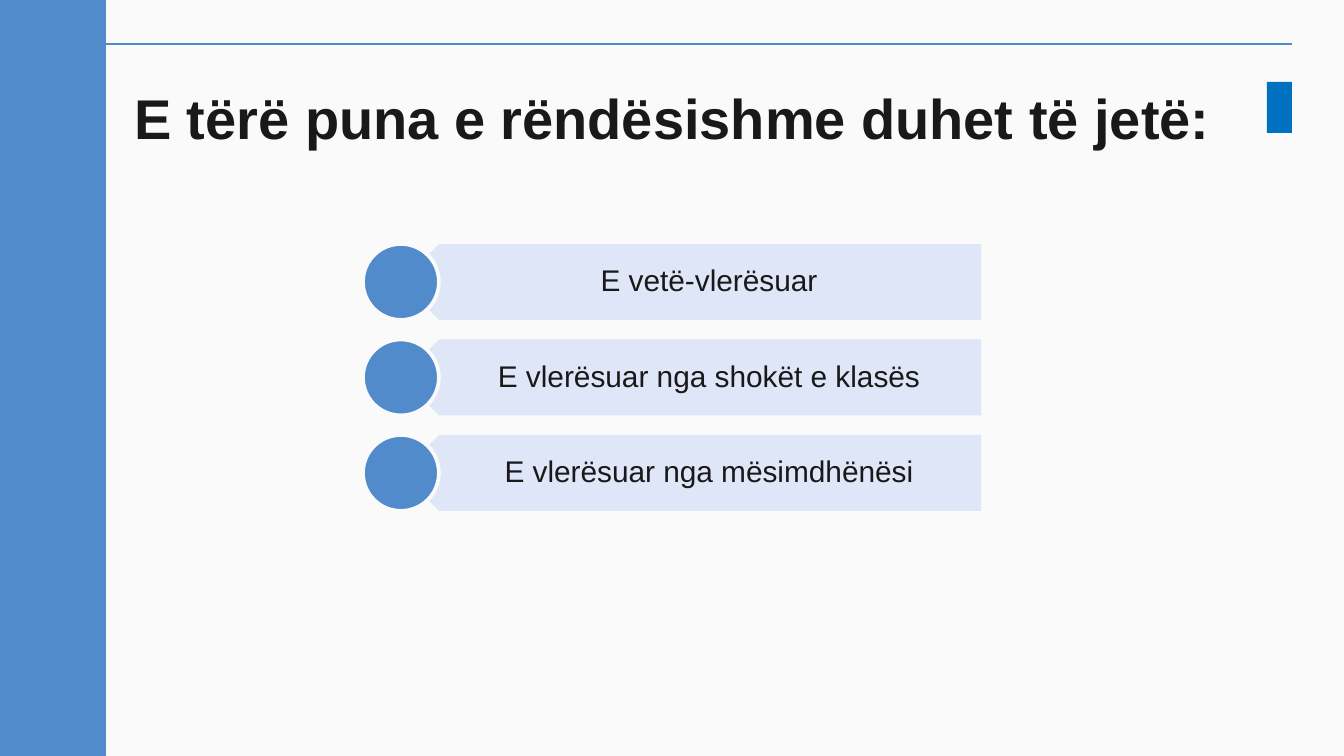
from pptx import Presentation
from pptx.dml.color import RGBColor
from pptx.enum.shapes import MSO_CONNECTOR, MSO_SHAPE
from pptx.enum.text import MSO_ANCHOR, MSO_AUTO_SIZE, PP_ALIGN
from pptx.oxml.ns import qn
from pptx.util import Pt
from lxml import etree

RECTANGLE = MSO_SHAPE.RECTANGLE
PENTAGON = MSO_SHAPE.PENTAGON
OVAL = MSO_SHAPE.OVAL
STRAIGHT = MSO_CONNECTOR.STRAIGHT
CENTER = PP_ALIGN.CENTER
TOP = MSO_ANCHOR.TOP
MIDDLE = MSO_ANCHOR.MIDDLE
NO_AUTOFIT = MSO_AUTO_SIZE.NONE

EMU_PER_PX = 9144000 / 1344
WIDTH, HEIGHT = 1344, 756
FONT = "Arial"
COLORS = {
    "background": "FAFAFA",
    "blue": "518BCB",
    "accent": "0070C0",
    "banner": "DEE6F7",
    "text": "191919",
}
TITLE = "E tërë puna e rëndësishme duhet të jetë:"
ASSESSMENTS = [
    "E vetë-vlerësuar",
    "E vlerësuar nga shokët e klasës",
    "E vlerësuar nga mësimdhënësi",
]


def px(length):
    return round(length * EMU_PER_PX)


def color(name):
    return RGBColor.from_string(COLORS[name])


def add_filled(slide, kind, box, fill):
    shape = slide.shapes.add_shape(kind, *map(px, box))
    shape.shadow.inherit = False
    shape.fill.solid()
    shape.fill.fore_color.rgb = color(fill)
    shape.line.fill.background()
    return shape


def format_text(frame, text, size, insets, anchor, bold=False):
    frame.word_wrap = True
    frame.auto_size = NO_AUTOFIT
    frame.vertical_anchor = anchor
    frame.margin_left, frame.margin_top, frame.margin_right, frame.margin_bottom = map(px, insets)
    paragraph = frame.paragraphs[0]
    paragraph.text = text
    paragraph.alignment = CENTER
    paragraph.font.name = FONT
    paragraph.font.size = Pt(size)
    paragraph.font.bold = bold
    paragraph.font.color.rgb = color("text")
    return paragraph


def add_frame(slide, left, top, width, height):
    rule_y = px(top + 44)
    rule = slide.shapes.add_connector(STRAIGHT, px(left + 7), rule_y, px(left + width - 52), rule_y)
    rule.line.color.rgb = color("blue")
    rule.line.width = Pt(0.75)
    etree.SubElement(rule._element.spPr, qn("a:effectLst"))
    add_filled(slide, RECTANGLE, (left, top, 106, height), "blue")
    add_filled(slide, RECTANGLE, (left + width - 77, top + 82, 25, 51), "accent")


def place_title(slide, left, top, width, height):
    title = slide.shapes.title
    title.left, title.top, title.width, title.height = map(px, (left, top, width, height))
    paragraph = format_text(title.text_frame, TITLE, 30, (13, 18, 13, 13), TOP, bold=True)
    paragraph.line_spacing = 1.0
    paragraph.space_before = Pt(0)


def add_assessment(slide, text, left, top, width, height):
    banner_left = left + height // 2
    banner = add_filled(slide, PENTAGON, (banner_left, top, left + width - banner_left, height), "banner")
    banner.rotation = 180

    label_left = left + 56
    label = slide.shapes.add_textbox(*map(px, (label_left, top, left + width - label_left, height)))
    paragraph = format_text(label.text_frame, text, 16, (34, 9, 16, 9), MIDDLE)
    paragraph.line_spacing = 0.9

    marker = add_filled(slide, OVAL, (left, top, height, height), "blue")
    marker.line.color.rgb = color("background")
    marker.line.width = Pt(2)


def add_assessments(slide, left, top, width, height):
    row_height = 76
    pitch = (height - row_height) / (len(ASSESSMENTS) - 1)
    for row, text in enumerate(ASSESSMENTS):
        add_assessment(slide, text, left, top + row * pitch, width, row_height)


def main():
    presentation = Presentation()
    presentation.slide_width = px(WIDTH)
    presentation.slide_height = px(HEIGHT)
    slide = presentation.slides.add_slide(presentation.slide_layouts[5])
    slide.background.fill.solid()
    slide.background.fill.fore_color.rgb = color("background")

    add_frame(slide, 0, 0, WIDTH, HEIGHT)
    place_title(slide, 106, 66, 1133, 85)
    add_assessments(slide, 363, 244, 618, 267)
    presentation.save("out.pptx")


if __name__ == "__main__":
    main()
